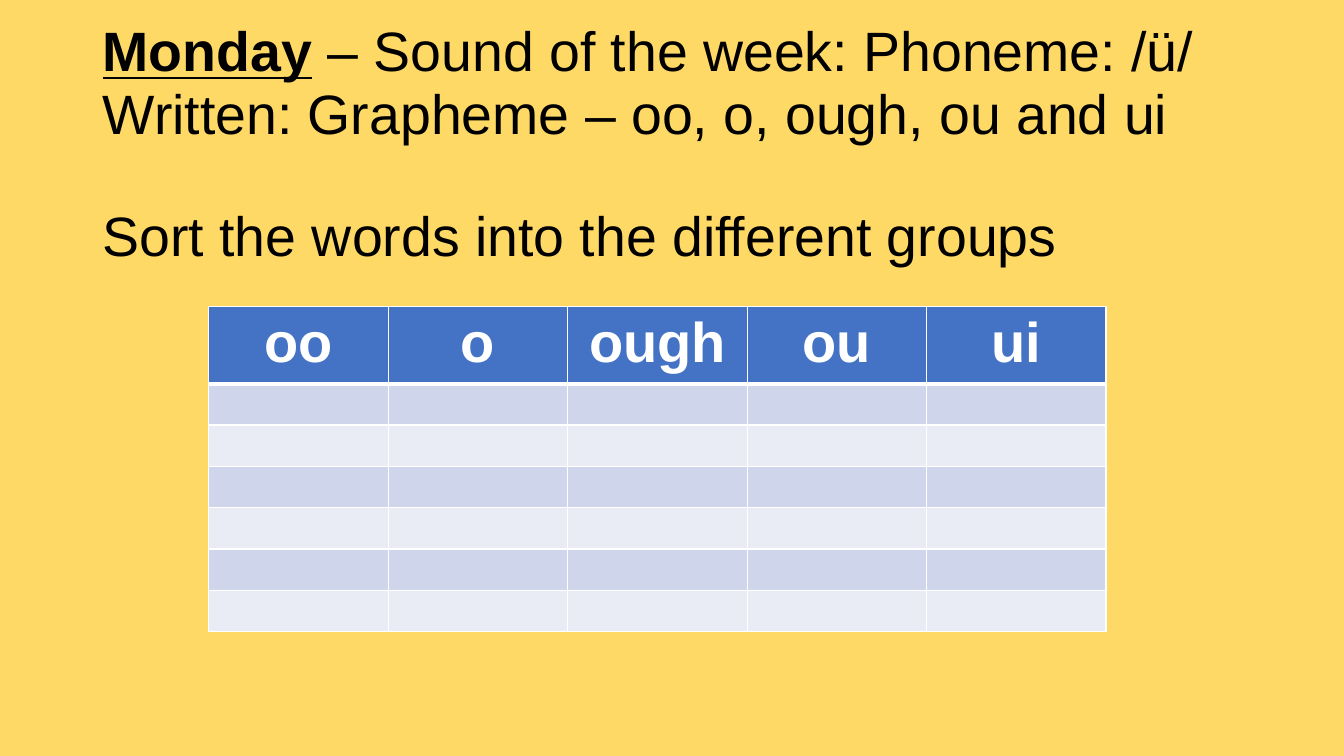
import pptx
import pptx.dml.color
import pptx.enum.text
import pptx.oxml
import pptx.oxml.ns
import pptx.util
from pptx.dml.color import RGBColor
from pptx.util import Inches, Pt

# Content: each title line is a list of (text, emphasised)
TITLE_LINES = [
    [("Monday", True), (" – Sound of the week: Phoneme: /ü/", False)],
    [("Written: Grapheme – oo, o, ough, ou and ui", False)],
    [("Sort the words into the different groups", False)],
]
GRAPHEME_GROUPS = [["oo", "o", "ough", "ou"], ["ui"]]
WORD_ROWS = 6

# Style
FONT = "Arial"
YELLOW = RGBColor(0xFF, 0xD9, 0x66)
BLACK = RGBColor(0, 0, 0)
WHITE = RGBColor(0xFF, 0xFF, 0xFF)
BLUE = RGBColor(0x44, 0x72, 0xC4)
BANDS = [RGBColor(0xCF, 0xD5, 0xEA), RGBColor(0xE9, 0xEB, 0xF5)]

# Layout in inches
TABLE_LEFT, TABLE_TOP = 2.07, 3.04
COLUMN_WIDTH, HEADER_HEIGHT, ROW_HEIGHT = 1.78, 0.71, 0.41


def set_borders(cell, bottom_width, top_width):
    properties = cell._tc.get_or_add_tcPr()
    widths = {"lnL": 1, "lnR": 1, "lnT": top_width, "lnB": bottom_width}
    for position, (side, width) in enumerate(widths.items()):
        line = pptx.oxml.parse_xml(
            f'<a:{side} {pptx.oxml.ns.nsdecls("a")} w="{Pt(width)}">'
            f'<a:solidFill><a:srgbClr val="{WHITE}"/></a:solidFill></a:{side}>'
        )
        properties.insert(position, line)


def add_title(page):
    box = page.shapes.add_textbox(Inches(0.92), Inches(0.72), Inches(11.5), Inches(1.45))
    frame = box.text_frame
    frame.word_wrap = True
    frame.vertical_anchor = pptx.enum.text.MSO_ANCHOR.MIDDLE
    for number, line in enumerate(TITLE_LINES):
        para = frame.add_paragraph() if number else frame.paragraphs[0]
        para.line_spacing = 0.94
        para.font.name = FONT
        para.font.size = Pt(39.6)
        para.font.color.rgb = BLACK
        for text, emphasised in line:
            span = para.add_run()
            span.text = text
            span.font.bold = span.font.underline = emphasised
    # One line of space before the instruction
    para.space_before = Pt(42.8)


def add_sorting_table(page, left, graphemes):
    table = page.shapes.add_table(
        WORD_ROWS + 1, len(graphemes), Inches(left), Inches(TABLE_TOP),
        Inches(COLUMN_WIDTH * len(graphemes)),
        Inches(HEADER_HEIGHT + ROW_HEIGHT * WORD_ROWS),
    ).table
    for column in table.columns:
        column.width = Inches(COLUMN_WIDTH)
    for index, row in enumerate(table.rows):
        row.height = Inches(ROW_HEIGHT if index else HEADER_HEIGHT)
        for cell in row.cells:
            cell.fill.solid()
            cell.fill.fore_color.rgb = BANDS[(index - 1) % 2] if index else BLUE
            set_borders(cell, 1 if index else 3, 3 if index == 1 else 1)
    for cell, grapheme in zip(table.rows[0].cells, graphemes):
        cell.text = grapheme
        para = cell.text_frame.paragraphs[0]
        para.alignment = pptx.enum.text.PP_ALIGN.CENTER
        para.font.name = FONT
        para.font.size = Pt(40)
        para.font.bold = True
        para.font.color.rgb = WHITE


def main():
    deck = pptx.Presentation()
    deck.slide_width, deck.slide_height = Inches(13.33), Inches(7.5)
    page = deck.slides.add_slide(deck.slide_layouts[6])
    page.background.fill.solid()
    page.background.fill.fore_color.rgb = YELLOW

    add_title(page)

    # Tables stand side by side
    left = TABLE_LEFT
    for graphemes in GRAPHEME_GROUPS:
        add_sorting_table(page, left, graphemes)
        left += COLUMN_WIDTH * len(graphemes)

    deck.save("out.pptx")


if __name__ == "__main__":
    main()
